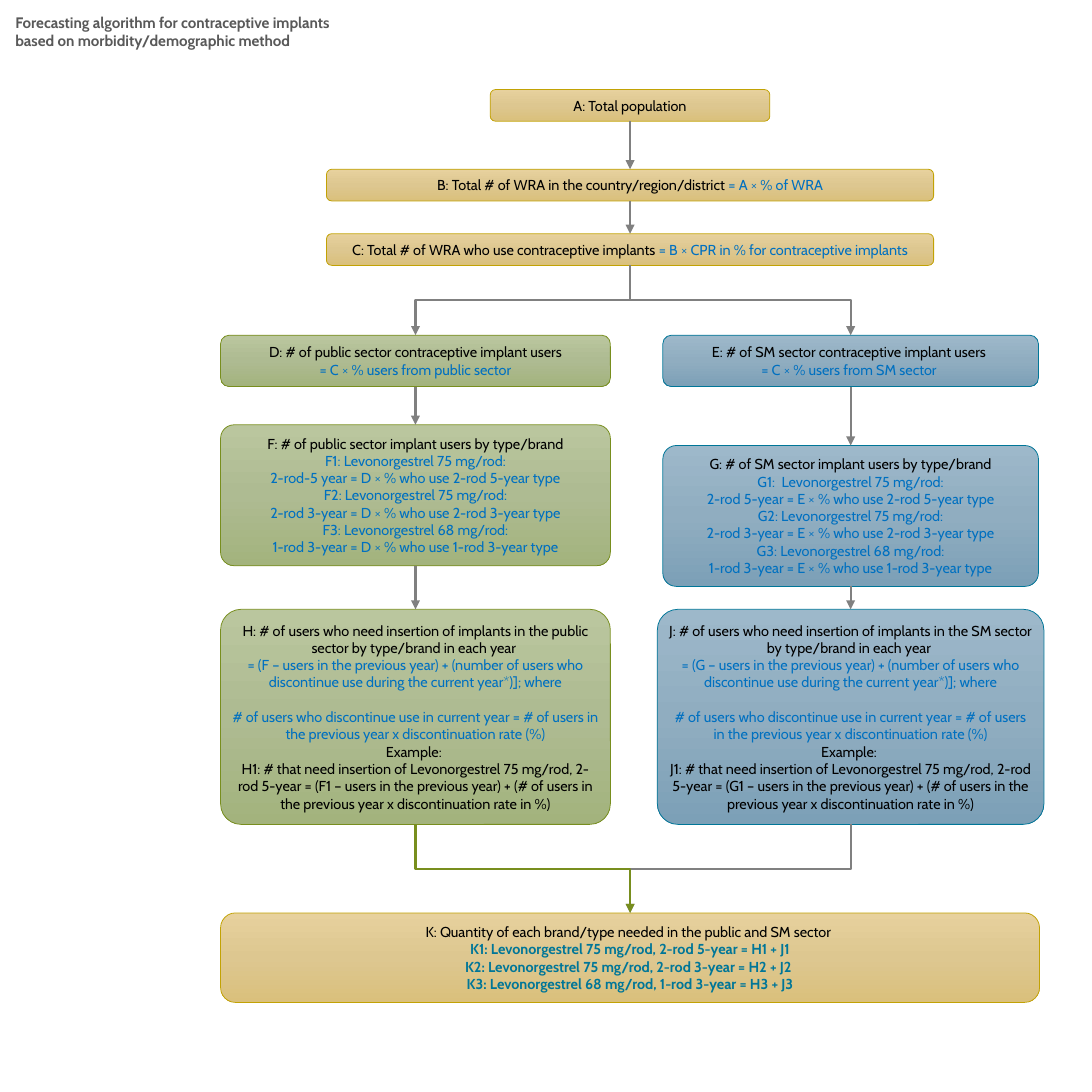
from copy import deepcopy

from lxml.etree import SubElement
from pptx import Presentation
from pptx.dml.color import RGBColor
from pptx.enum.shapes import MSO_CONNECTOR as LINK, MSO_SHAPE as SHAPE
from pptx.enum.text import MSO_ANCHOR as ANCHOR, MSO_AUTO_SIZE as FIT, PP_ALIGN as ALIGN
from pptx.oxml.ns import qn
from pptx.util import Inches, Pt

# Content
FONT = "Cabin"
TITLE = "Forecasting algorithm for contraceptive implants based on morbidity/demographic method"
BLACK, BLUE, TEAL, GRAY, GREEN = "000000", "0070C0", "007698", "808080", "788E1E"

# Style: three gradient colours, then the outline
STYLES = {
    "gold": (("E7D19D", "DDC790", "DAC07C"), "C2A204"),
    "green": (("BAC69E", "AEBB92", "A3B37D"), GREEN),
    "blue": (("9DB8CA", "90ADC0", "7CA0B7"), TEAL),
}


def need(box, users, sector):
    """Text of the box on users who need insertion."""
    return [
        [(f"{box}: # of users who need insertion of implants in the {sector} sector "
          "by type/brand in each year ", BLACK)],
        [(f"= ({users} – users in the previous year) + (number of users who "
          "discontinue use during the current year*)]; where", BLUE)],
        [("# of users who discontinue use in current year = # of users in the "
          "previous year x discontinuation rate (%)", BLUE)],
        [("Example: ", BLACK)],
        [(f"{box}1: # that need insertion of Levonorgestrel 75 mg/rod, 2-rod 5-year = "
          f"({users}1 – users in the previous year) + (# of users in the previous year "
          "x discontinuation rate in %)", BLACK)],
    ]


def stack(head, tone, *lines):
    """A black heading over lines of one colour."""
    return [[(head, BLACK)]] + [[(line, tone)] for line in lines]


TEXTS = {
    "A": [[("A: Total population", BLACK)]],
    "B": [[("B: Total # of WRA in the country/region/district ", BLACK),
           ("= A × % of WRA", BLUE)]],
    "C": [[("C: Total # of WRA who use contraceptive implants ", BLACK),
           ("= B × CPR in % for contraceptive implants", BLUE)]],
    "D": stack("D: # of public sector contraceptive implant users", BLUE,
               "= C × % users from public sector"),
    "E": stack("E: # of SM sector contraceptive implant users ", BLUE,
               "= C × % users from SM sector "),
    "F": stack("F: # of public sector implant users by type/brand", BLUE,
               "F1: Levonorgestrel 75 mg/rod:",
               "2-rod-5 year = D × % who use 2-rod 5-year type",
               "F2: Levonorgestrel 75 mg/rod:",
               "2-rod 3-year = D × % who use 2-rod 3-year type",
               "F3: Levonorgestrel 68 mg/rod:",
               "1-rod 3-year = D × % who use 1-rod 3-year type"),
    "G": stack("G: # of SM sector implant users by type/brand", BLUE,
               "G1:  Levonorgestrel 75 mg/rod:",
               "2-rod 5-year = E × % who use 2-rod 5-year type",
               "G2: Levonorgestrel 75 mg/rod:",
               "2-rod 3-year = E × % who use 2-rod 3-year type",
               "G3: Levonorgestrel 68 mg/rod:",
               "1-rod 3-year = E × % who use 1-rod 3-year type"),
    "H": need("H", "F", "public"),
    "J": need("J", "G", "SM"),
    "K": stack("K: Quantity of each brand/type needed in the public and SM sector ", TEAL,
               "K1: Levonorgestrel 75 mg/rod, 2-rod 5-year = H1 + J1",
               "K2: Levonorgestrel 75 mg/rod, 2-rod 3-year = H2 + J2 ",
               "K3: Levonorgestrel 68 mg/rod, 1-rod 3-year = H3 + J3"),
}

# Box: style, then left, top, width, height
BOXES = {
    "A": ("gold", 4.49, 0.82, 2.56, 0.29),
    "B": ("gold", 2.99, 1.55, 5.56, 0.29),
    "C": ("gold", 2.99, 2.14, 5.56, 0.29),
    "D": ("green", 2.02, 3.07, 3.57, 0.47),
    "E": ("blue", 6.07, 3.07, 3.44, 0.47),
    "F": ("green", 2.02, 3.89, 3.57, 1.29),
    "G": ("blue", 6.07, 4.08, 3.44, 1.29),
    "H": ("green", 2.02, 5.58, 3.57, 1.97),
    "J": ("blue", 6.02, 5.58, 3.54, 1.97),
    "K": ("gold", 2.02, 8.36, 7.5, 0.82),
}
ROUND = {name: 0.096 for name in "FGHJ"}
ARROWS = ["AB", "BC", "DF", "EG", "FH", "GJ"]
BENDS = [("JK", GRAY), ("CD", GRAY), ("CE", GRAY), ("HK", GREEN)]


def color(code):
    return RGBColor.from_string(code)


def style(run, size, tone, bold):
    run.font.name, run.font.size, run.font.bold = FONT, Pt(size), bold
    run.font.color.rgb = color(tone)


def add_box(slide, name):
    look, *place = BOXES[name]
    shades, edge = STYLES[look]
    box = slide.shapes.add_shape(SHAPE.ROUNDED_RECTANGLE, *map(Inches, place))
    box.shadow.inherit = False
    if name in ROUND:
        box.adjustments[0] = ROUND[name]
    box.line.color.rgb, box.line.width = color(edge), Pt(0.5)

    # Gradient from top to bottom, with a third stop
    box.fill.gradient()
    box.fill.gradient_angle = 270
    stops = box._element.spPr.find(".//" + qn("a:gsLst"))
    stops.append(deepcopy(stops[0]))
    for i, stop in enumerate(box.fill.gradient_stops):
        stop.position, stop.color.rgb = i / 2, color(shades[i])

    # Text
    frame = box.text_frame
    frame.word_wrap, frame.vertical_anchor = True, ANCHOR.MIDDLE
    frame.margin_left = frame.margin_right = Inches(0.05)
    frame.margin_top = frame.margin_bottom = Inches(0.05)
    for i, parts in enumerate(TEXTS[name]):
        para = frame.add_paragraph() if i else frame.paragraphs[0]
        para.alignment = ALIGN.CENTER
        if name in "HJ" and i == 2:
            para.space_before = Pt(11.5)
        for text, tone in parts:
            run = para.add_run()
            run.text = text
            style(run, 9.5, tone, tone == TEAL)
    return box


def link(slide, start, end, tone=GRAY, bent=False):
    """Arrow from the bottom of one box to the top of the next."""
    x1, x2 = (box.left + box.width // 2 for box in (start, end))
    y1, y2 = start.top + start.height, end.top
    kind = LINK.ELBOW if bent else LINK.STRAIGHT
    line = slide.shapes.add_connector(kind, x1, y1, x2, y2)
    line.begin_connect(start, 2)
    line.end_connect(end, 0)
    props = line._element.spPr
    if bent:
        # Turn the elbow so that it leaves and arrives vertically
        wide, high = abs(x2 - x1), y2 - y1
        line.left, line.top = (x1 + x2 - high) // 2, (y1 + y2 - wide) // 2
        line.width, line.height = high, wide
        right = x2 > x1
        turn = props.find(qn("a:xfrm"))
        turn.set("rot", str((270 if right else 90) * 60000))
        turn.set("flipH", str(int(right)))
    line.line.color.rgb, line.line.width = color(tone), Pt(1.5)
    SubElement(props.find(qn("a:ln")), qn("a:tailEnd"), type="triangle")
    SubElement(props, qn("a:effectLst"))


def main():
    deck = Presentation()
    deck.slide_width = deck.slide_height = Inches(10)
    slide = deck.slides.add_slide(deck.slide_layouts[5])

    # Title
    title = slide.shapes.title
    title.left, title.top = Inches(0.04), Inches(0.07)
    title.width, title.height = Inches(3.46), Inches(0.44)
    frame = title.text_frame
    frame.text = TITLE
    frame.word_wrap, frame.auto_size = True, FIT.NONE
    frame.vertical_anchor = ANCHOR.TOP
    frame.paragraphs[0].alignment = ALIGN.LEFT
    style(frame.paragraphs[0].runs[0], 10, "595959", True)

    # Boxes and arrows
    boxes = {name: add_box(slide, name) for name in BOXES}
    for start, end in ARROWS:
        link(slide, boxes[start], boxes[end])
    for (start, end), tone in BENDS:
        link(slide, boxes[start], boxes[end], tone, bent=True)

    deck.save("out.pptx")


if __name__ == "__main__":
    main()
